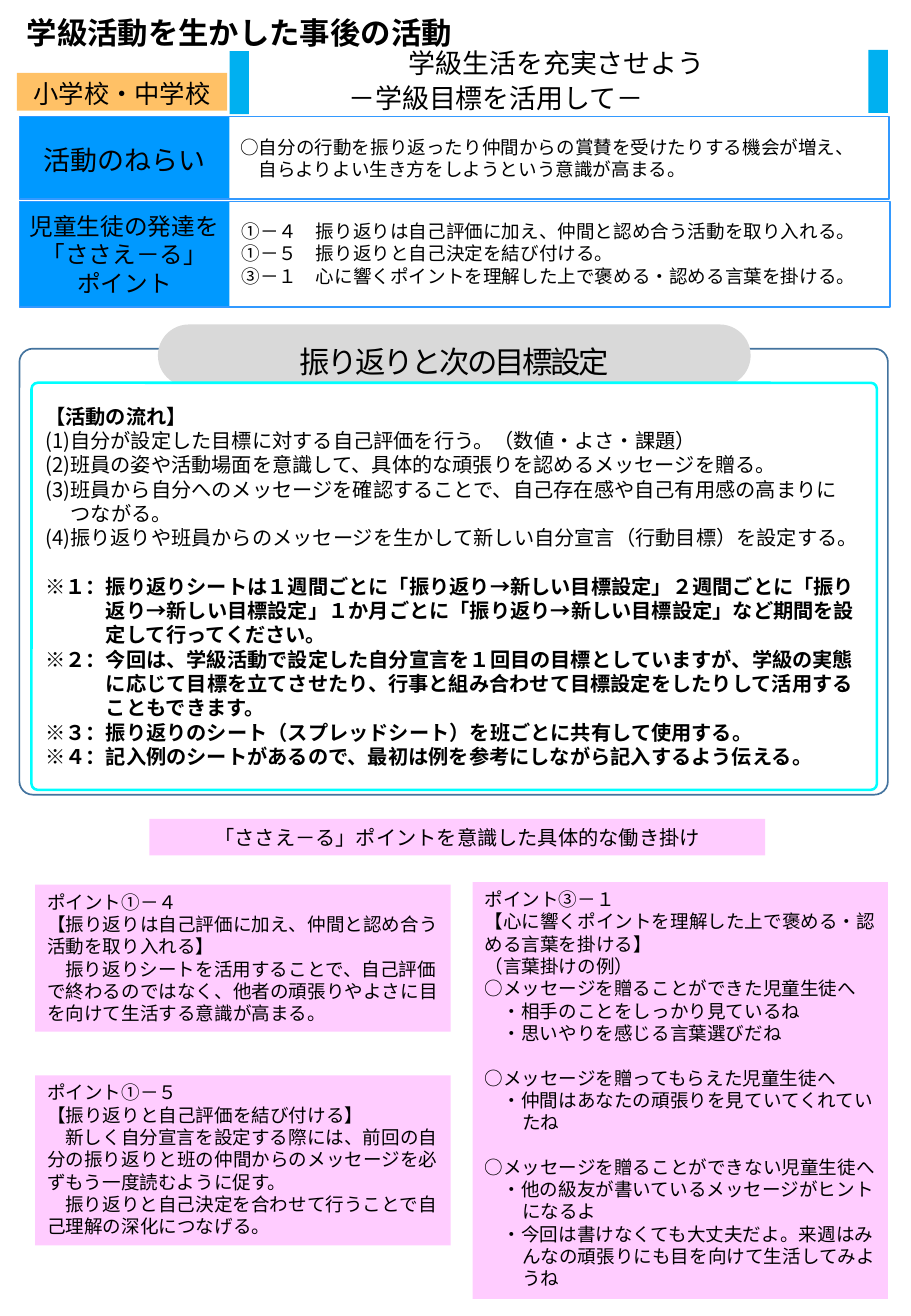
from dataclasses import dataclass, field

from lxml import etree
from pptx import Presentation
from pptx import util as u
from pptx.dml.color import RGBColor
from pptx.enum import shapes, text
from pptx.oxml import ns

PX = 9144  # 100 px to the inch
NOTO, CAL = "Noto Sans CJK JP", "Calibri"
BLUE, EDGE, PINK, CYAN = "0099FF", "3399FF", "FFCCFF", "00B0F0"
MID, TOP = text.MSO_ANCHOR.MIDDLE, text.MSO_ANCHOR.TOP


@dataclass
class Para:
    words: str
    left: int = 0  # px
    first: int = 0  # first line against left, px
    bold: bool = False
    gap: bool = False  # one free line above


@dataclass
class Box:
    at: tuple[int, int, int, int]
    fill: str = ""
    line: str = ""
    width: float = 1
    curve: float = 0
    alpha: int = 100
    paras: list = field(default_factory=list)
    form: dict = field(default_factory=dict)


def color(code: str) -> RGBColor:
    return RGBColor.from_string(code)


def write(frame, paras: list, size: int = 11, face: str = NOTO, mid: bool = False,
          anchor=TOP, wrap: bool = True, lead: float = 1.2, track: int = 0,
          right: int = 10) -> None:
    """Fill a text frame; a \\v in the words breaks the line."""
    frame.word_wrap = wrap
    frame.vertical_anchor = anchor
    frame.margin_right = right * PX
    for i, item in enumerate(paras):
        para = item if isinstance(item, Para) else Para(item)
        p = frame.add_paragraph() if i else frame.paragraphs[0]
        p.alignment = text.PP_ALIGN.CENTER if mid else text.PP_ALIGN.LEFT
        p.line_spacing = u.Pt(size * lead)
        if para.gap:
            p.space_before = u.Pt(size * lead)
        prop = p._p.get_or_add_pPr()
        prop.set("marL", str(para.left * PX))
        prop.set("indent", str(para.first * PX))
        for j, part in enumerate(para.words.split("\v")):
            if j:
                p.add_line_break()
            run = p.add_run()
            run.text = part
            font = run.font
            font.size, font.name, font.bold = u.Pt(size), face, para.bold
            font.color.rgb = color("000000")
            rpr = run._r.get_or_add_rPr()
            etree.SubElement(rpr, ns.qn("a:ea"), typeface=face)
            if track:
                rpr.set("spc", str(track))


def draw(slide, box: Box) -> None:
    at = [n * PX for n in box.at]
    if not (box.fill or box.line):
        shape = slide.shapes.add_textbox(*at)
    else:
        kind = shapes.MSO_SHAPE
        shape = slide.shapes.add_shape(
            kind.ROUNDED_RECTANGLE if box.curve else kind.RECTANGLE, *at)
        shape.shadow.inherit = False
        if box.curve:
            shape.adjustments[0] = box.curve
        if box.fill:
            shape.fill.solid()
            shape.fill.fore_color.rgb = color(box.fill)
        else:
            shape.fill.background()
        if box.alpha < 100:
            tint = shape._element.spPr.find(".//" + ns.qn("a:srgbClr"))
            etree.SubElement(tint, ns.qn("a:alpha"), val=str(box.alpha * 1000))
        if box.line:
            shape.line.color.rgb = color(box.line)
            shape.line.width = u.Pt(box.width)
        else:
            shape.line.fill.background()
    if box.paras:
        write(shape.text_frame, box.paras, **box.form)


def label(size: int, lead: float = 1.3) -> dict:
    return dict(size=size, face=CAL, mid=True, anchor=MID, wrap=False, lead=lead)


def note(words: str, gap: bool = False) -> Para:
    return Para(words, 50, -50, True, gap)


def dot(words: str) -> Para:
    return Para(words, 31, -16)


# Head, aims and points
HEAD = [
    Box((16, 96, 173, 68), BLUE, paras=["活動のねらい"], form=label(16)),
    Box((16, 96, 716, 68), line=EDGE),
    Box((14, 60, 173, 31), "FF9900", alpha=60, paras=["小学校・中学校"], form=label(15)),
    Box((16, 166, 173, 87), BLUE, form=label(14, 1.2),
        paras=["児童生徒の発達を", "「ささえ－る」", "ポイント"]),
    Box((189, 164, 543, 89), form=dict(anchor=MID), paras=[
        "①－４　振り返りは自己評価に加え、仲間と認め合う活動を取り入れる。",
        "①－５　振り返りと自己決定を結び付ける。",
        "③－１　心に響くポイントを理解した上で褒める・認める言葉を掛ける。"]),
    Box((16, 166, 717, 87), line=EDGE),
    Box((9, 4, 376, 40), "FFFFFF", paras=[Para("学級活動を生かした事後の活動", bold=True)],
        form=label(18) | dict(anchor=TOP)),
    Box((188, 96, 543, 68), form=dict(anchor=MID), paras=[
        Para("○自分の行動を振り返ったり仲間からの賞賛を受けたりする機会が増え、\v"
             "自らよりよい生き方をしようという意識が高まる。", 15, -15)]),
]

# Flow of the activity
FLOW = [
    Box((16, 287, 715, 367), line="43739E", curve=0.03),
    Box((130, 267, 488, 51), "D9D9D9", curve=0.5, paras=["振り返りと次の目標設定"],
        form=dict(size=18, mid=True, anchor=MID, lead=1.6, track=-150)),
    Box((26, 315, 696, 335), "FFFFFF", "00FFFF", 1.5, 0.015,
        form=dict(size=12, anchor=MID), paras=[
            Para("【活動の流れ】", bold=True),
            "(1)自分が設定した目標に対する自己評価を行う。（数値・よさ・課題）",
            "(2)班員の姿や活動場面を意識して、具体的な頑張りを認めるメッセージを贈る。",
            Para("(3)班員から自分へのメッセージを確認することで、自己存在感や自己有用感の高まりに\v"
                 "つながる。", 21, -21),
            "(4)振り返りや班員からのメッセージを生かして新しい自分宣言（行動目標）を設定する。",
            note("※１：振り返りシートは１週間ごとに「振り返り→新しい目標設定」２週間ごとに「振り\v"
                 "返り→新しい目標設定」１か月ごとに「振り返り→新しい目標設定」など期間を設\v"
                 "定して行ってください。", True),
            note("※２：今回は、学級活動で設定した自分宣言を１回目の目標としていますが、学級の実態\v"
                 "に応じて目標を立てさせたり、行事と組み合わせて目標設定をしたりして活用する\v"
                 "こともできます。"),
            note("※３：振り返りのシート（スプレッドシート）を班ごとに共有して使用する。"),
            note("※４：記入例のシートがあるので、最初は例を参考にしながら記入するよう伝える。")]),
]

# Pink cards
CARDS = [
    Box((123, 674, 507, 30), PINK, form=dict(size=12, mid=True),
        paras=["「ささえ－る」ポイントを意識した具体的な働き掛け"]),
    Box((29, 728, 342, 121), PINK, paras=[
        "ポイント①－４",
        "【振り返りは自己評価に加え、仲間と認め合う活動を取り入れる】",
        Para("振り返りシートを活用することで、自己評価で終わるのではなく、"
             "他者の頑張りやよさに目を向けて生活する意識が高まる。", 0, 15)]),
    Box((29, 885, 342, 140), PINK, paras=[
        "ポイント①－５",
        "【振り返りと自己評価を結び付ける】",
        Para("新しく自分宣言を設定する際には、前回の自分の振り返りと"
             "班の仲間からのメッセージを必ずもう一度読むように促す。", 0, 15),
        Para("振り返りと自己決定を合わせて行うことで自己理解の深化につなげる。", 0, 15)]),
    Box((389, 726, 342, 343), PINK, paras=[
        "ポイント③－１",
        "【心に響くポイントを理解した上で褒める・認める言葉を掛ける】",
        "（言葉掛けの例）",
        "○メッセージを贈ることができた児童生徒へ",
        dot("・相手のことをしっかり見ているね"),
        dot("・思いやりを感じる言葉選びだね"),
        Para("○メッセージを贈ってもらえた児童生徒へ", gap=True),
        dot("・仲間はあなたの頑張りを見ていてくれてい\vたね"),
        Para("○メッセージを贈ることができない児童生徒へ", gap=True),
        dot("・他の級友が書いているメッセージがヒント\vになるよ"),
        dot("・今回は書けなくても大丈夫だよ。来週はみ\v"
            "んなの頑張りにも目を向けて生活してみよ\vうね")]),
]

# Theme with its side bars
THEME = [
    Box((161, 40, 595, 50), paras=[Para("学級生活を充実させよう", 100), "－学級目標を活用して－"],
        form=dict(size=16, mid=True, anchor=MID, lead=1.3, right=110)),
    Box((189, 42, 16, 52), CYAN),
    Box((715, 41, 16, 52), CYAN),
]


def main() -> None:
    deck = Presentation()
    deck.slide_width, deck.slide_height = 750 * PX, 1083 * PX
    slide = deck.slides.add_slide(deck.slide_layouts[6])
    for box in HEAD + FLOW + CARDS + THEME:
        draw(slide, box)
    deck.save("out.pptx")


if __name__ == "__main__":
    main()
